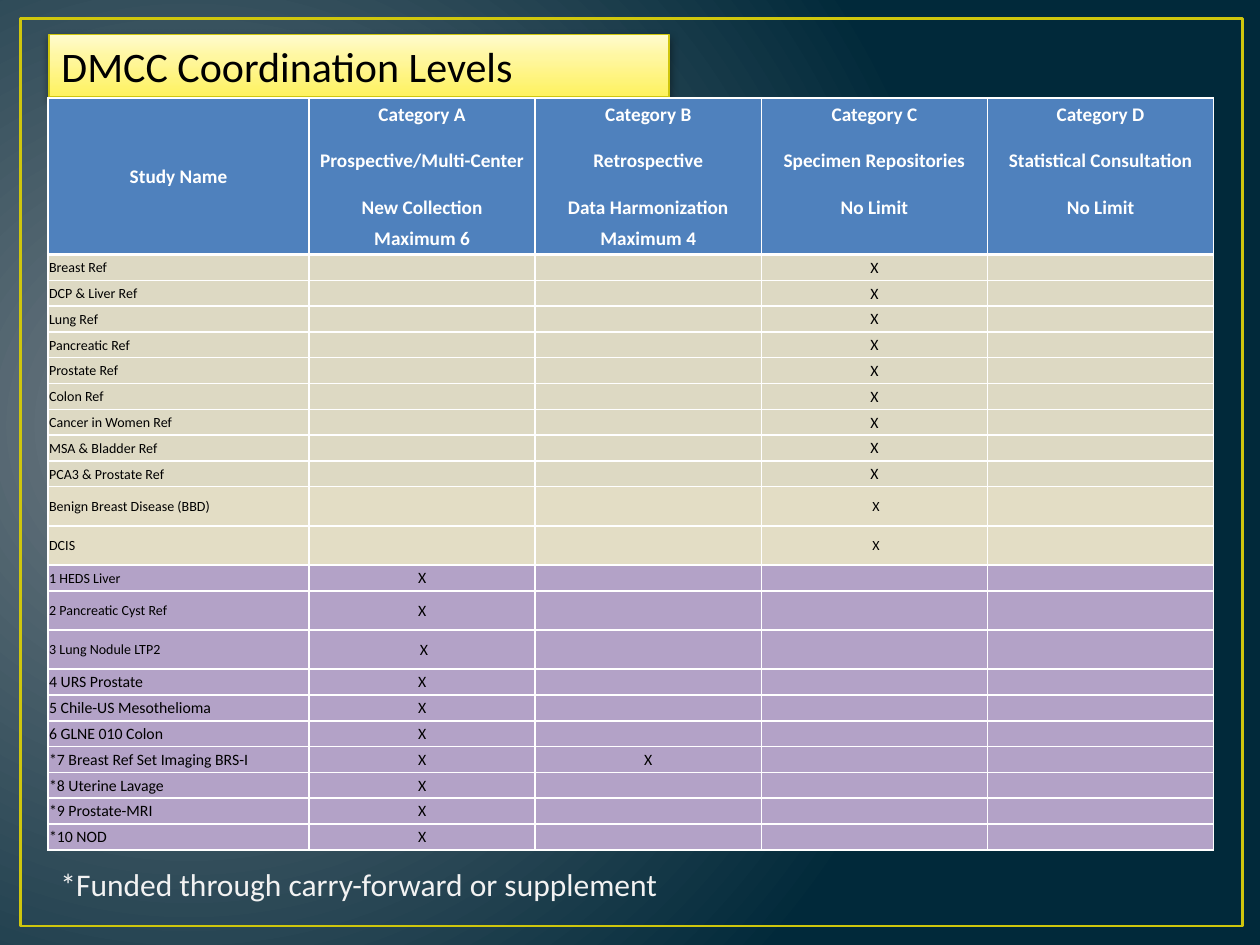
from dataclasses import dataclass

from lxml.etree import SubElement
from pptx import Presentation
from pptx.dml.color import RGBColor as RGB
from pptx.enum.shapes import MSO_SHAPE as SHAPE
from pptx.enum.text import MSO_ANCHOR as ANCHOR, MSO_AUTO_SIZE as AUTO, PP_ALIGN as ALIGN
from pptx.oxml import parse_xml
from pptx.oxml.ns import nsdecls, qn
from pptx.util import Cm, Pt


@dataclass(frozen=True)
class Theme:
    font: str = "Calibri"
    frame: str = "CFC60D"
    header: str = "4F81BD"
    reference: str = "DDD9C3"
    cohort: str = "E3DDC5"
    trial: str = "B3A2C7"
    white: str = "FFFFFF"
    black: str = "000000"
    footnote: str = "F2F2F2"
    backdrop: tuple = ((0, "717C84"), (100, "01293A"))
    banner: tuple = ((0, "FEF25E"), (65, "FFF7A2"), (100, "FFFBCF"))
    title_size: int = 24
    note_size: int = 18
    header_size: int = 11
    body_size: int = 9
    small_size: int = 8


T = Theme()


def set_gradient(fill, root, stops, direction):
    """Fill with the (percent, colour) stops; direction is the XML for a:lin or a:path."""
    fill.gradient()
    old = root.find(".//" + qn("a:gradFill"))
    stops_xml = "".join(
        f'<a:gs pos="{pos * 1000}"><a:srgbClr val="{colour}"/></a:gs>' for pos, colour in stops)
    old.getparent().replace(old, parse_xml(
        f'<a:gradFill {nsdecls("a")} rotWithShape="1"><a:gsLst>{stops_xml}</a:gsLst>'
        f'{direction}</a:gradFill>'))


def style_cell(cell, fill, size, colour, bold=False, align=ALIGN.CENTER, top=1, bottom=1):
    """Format a cell; top and bottom are border widths in points, 0 for none."""
    cell.fill.solid()
    cell.fill.fore_color.rgb = RGB.from_string(fill)
    cell.vertical_anchor = ANCHOR.MIDDLE
    cell.margin_left = cell.margin_right = cell.margin_top = Cm(0.02)
    cell.margin_bottom = 0
    p = cell.text_frame.paragraphs[0]
    p.alignment = align
    p.font.name, p.font.size, p.font.bold = T.font, Pt(size), bold
    p.font.color.rgb = RGB.from_string(colour)
    if not cell.text:
        SubElement(p._p, qn("a:endParaRPr"), sz=str(size * 100))
    tcPr = cell._tc.get_or_add_tcPr()
    for i, (side, width) in enumerate(zip("LRTB", (1, 1, top, bottom))):
        paint = (f'<a:solidFill><a:srgbClr val="{T.white}"/></a:solidFill>'
                 if width else "<a:noFill/>")
        tcPr.insert(i, parse_xml(
            f'<a:ln{side} {nsdecls("a")} w="{Pt(width)}">{paint}</a:ln{side}>'))


prs = Presentation()
prs.slide_width, prs.slide_height = Cm(25.4), Cm(19.05)
s = prs.slides.add_slide(prs.slide_layouts[6])
set_gradient(s.background.fill, s._element, T.backdrop,
             '<a:path path="circle"><a:fillToRect l="15000" t="50000" r="85000" b="60000"/></a:path>')

# Frame
frame = s.shapes.add_shape(SHAPE.RECTANGLE, Cm(0.41), Cm(0.38), Cm(24.64), Cm(18.29))
frame.shadow.inherit = False
frame.fill.background()
frame.line.color.rgb = RGB.from_string(T.frame)
frame.line.width = Pt(1.5)

# Title banner
banner = s.shapes.add_shape(SHAPE.RECTANGLE, Cm(0.99), Cm(0.69), Cm(12.5), Cm(1.27))
banner.shadow.inherit = False
spPr = banner._element.spPr
set_gradient(banner.fill, spPr, T.banner, '<a:lin ang="16200000" scaled="0"/>')
banner.line.color.rgb = RGB.from_string(T.frame)
banner.line.width = Pt(0.75)
spPr.find(qn("a:effectLst")).append(parse_xml(
    f'<a:outerShdw {nsdecls("a")} blurRad="{Pt(5)}" dist="{Pt(2)}" dir="5400000" rotWithShape="0">'
    f'<a:srgbClr val="{T.black}"><a:alpha val="43000"/></a:srgbClr></a:outerShdw>'))
banner.text_frame.auto_size = AUTO.SHAPE_TO_FIT_TEXT

# Footnote
note = s.shapes.add_textbox(Cm(0.97), Cm(17.27), Cm(12.7), Cm(1.04))
note.text_frame.word_wrap = False
note.text_frame.auto_size = AUTO.SHAPE_TO_FIT_TEXT
note.text_frame.paragraphs[0].line_spacing = 1.07

for sp, text, size, colour in (
    (banner, "DMCC Coordination Levels", T.title_size, T.black),
    (note, "*Funded through carry-forward or supplement", T.note_size, T.footnote),
):
    p = sp.text_frame.paragraphs[0]
    p.text = text
    p.alignment = ALIGN.LEFT
    p.font.name, p.font.size = T.font, Pt(size)
    p.font.color.rgb = RGB.from_string(colour)

# Study table
HEADERS = (
    ("Study Name", "Category A", "Category B", "Category C", "Category D"),
    ("", "Prospective/Multi-Center", "Retrospective", "Specimen Repositories",
     "Statistical Consultation"),
    ("", "New Collection", "Data Harmonization", "No Limit", "No Limit"),
    ("", "Maximum 6", "Maximum 4", "", ""),
)
HEADER_HEIGHTS = (0.64, 1.23, 0.64, 0.64)
ROW, TALL = 0.52, 0.79
# Studies that share a fill, marked categories, row height, name size and mark size
GROUPS = (
    (T.reference, "C", ROW, T.small_size, T.body_size, (
        "Breast Ref", "DCP & Liver Ref", "Lung Ref", "Pancreatic Ref", "Prostate Ref",
        "Colon Ref", "Cancer in Women Ref", "MSA & Bladder Ref", "PCA3 & Prostate Ref")),
    (T.cohort, "C", TALL, T.small_size, T.small_size, ("Benign Breast Disease (BBD)", "DCIS")),
    (T.trial, "A", ROW, T.small_size, T.body_size, ("1 HEDS Liver",)),
    (T.trial, "A", TALL, T.small_size, T.body_size,
     ("2 Pancreatic Cyst Ref", "3 Lung Nodule LTP2")),
    (T.trial, "A", ROW, T.body_size, T.body_size,
     ("4 URS Prostate", "5 Chile-US Mesothelioma", "6 GLNE 010 Colon")),
    (T.trial, "AB", ROW, T.body_size, T.body_size, ("*7 Breast Ref Set Imaging BRS-I",)),
    (T.trial, "A", ROW, T.body_size, T.body_size,
     ("*8 Uterine Lavage", "*9 Prostate-MRI", "*10 NOD")),
)
NBSP_MARKS = ("Benign Breast Disease (BBD)", "DCIS", "3 Lung Nodule LTP2")

studies = [(name, *group[:5]) for group in GROUPS for name in group[5]]
heights = [*HEADER_HEIGHTS, *(study[3] for study in studies)]
table = s.shapes.add_table(len(heights), 5, Cm(0.97), Cm(1.98), Cm(23.5), Cm(sum(heights))).table
table.first_row = table.horz_banding = False
for col, width in zip(table.columns, (5.26, *[4.56] * 4)):
    col.width = Cm(width)
for row, height in zip(table.rows, heights):
    row.height = Cm(height)

last = len(HEADERS) - 1
for i, labels in enumerate(HEADERS):
    for j, label in enumerate(labels):
        cell = table.cell(i, j)
        cell.text = label
        style_cell(cell, T.header, T.header_size, T.white, bold=True,
                   top=1 if i == 0 else 0, bottom=1.5 if i == last or j == 0 else 0)
table.cell(0, 0).merge(table.cell(last, 0))

for i, (name, fill, marked, _, name_size, mark_size) in enumerate(studies, len(HEADERS)):
    top = 1.5 if i == len(HEADERS) else 1
    mark = " X" if name in NBSP_MARKS else "X"
    cell = table.cell(i, 0)
    cell.text = name
    style_cell(cell, fill, name_size, T.black, align=ALIGN.LEFT, top=top)
    for j, category in enumerate("ABCD", 1):
        cell = table.cell(i, j)
        cell.text = mark if category in marked else ""
        style_cell(cell, fill, mark_size, T.black, top=top)

prs.save("out.pptx")
